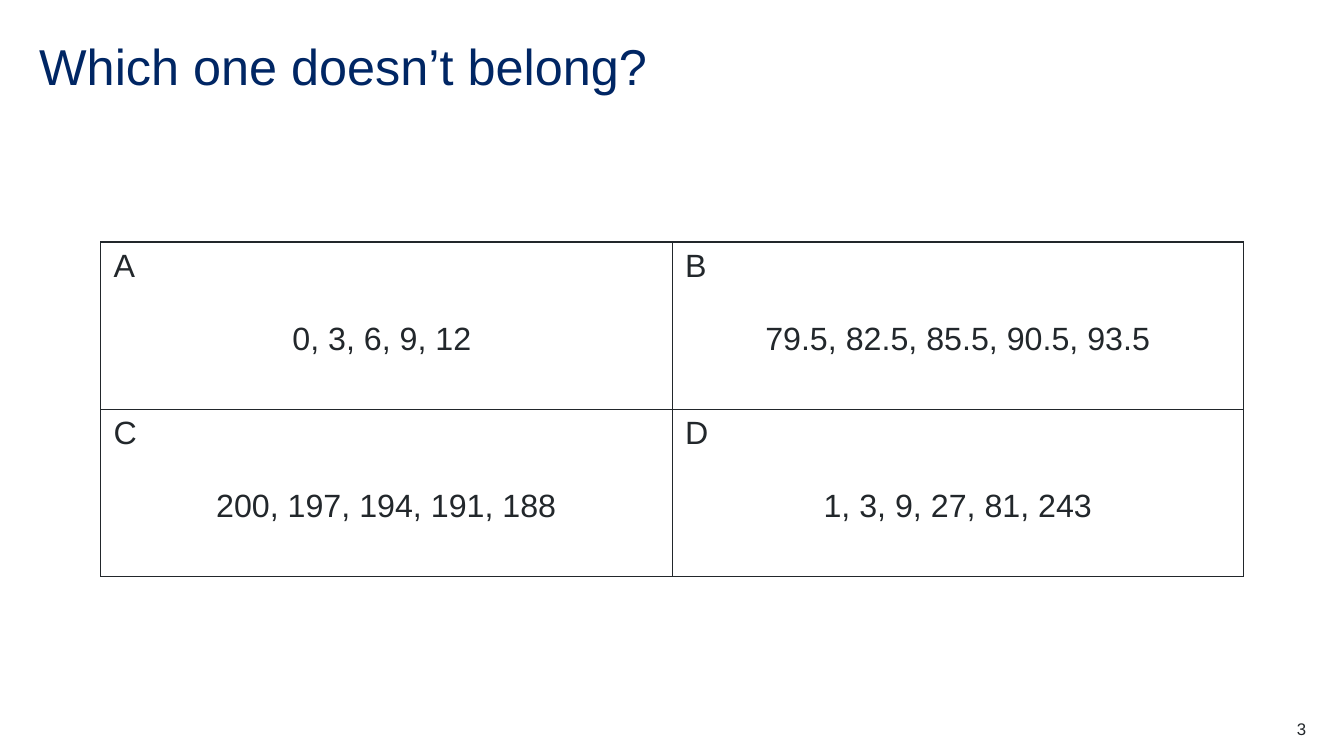
import pptx
import pptx.dml.color
import pptx.enum.text
import pptx.oxml
import pptx.oxml.ns
import pptx.util

Pt = pptx.util.Pt
ALIGN = pptx.enum.text.PP_ALIGN
ANCHOR = pptx.enum.text.MSO_ANCHOR

# Content
TITLE = "Which one doesn’t belong?"
PAGE_NUMBER = "3"
SEQUENCES = [
    [("A", "0, 3, 6, 9, 12 "), ("B", "79.5, 82.5, 85.5, 90.5, 93.5")],
    [("C", "200, 197, 194, 191, 188"), ("D", "1, 3, 9, 27, 81, 243")],
]

# Style and layout, in points
FONT, NAVY, INK = "Arial", "002664", "22272B"
TABLE_LEFT, TABLE_TOP = 72, 172.8
COLUMN_WIDTH, ROW_HEIGHT = 408.24, 119.5
ANSWER_GAP = 26


def colour(value):
    return pptx.dml.color.RGBColor.from_string(value)


def write(para, text, size=23, ink=INK, align=ALIGN.LEFT, before=0, spacing=1.0):
    para.alignment = align
    para.space_before = Pt(before)
    para.line_spacing = spacing
    span = para.add_run()
    span.text = text
    span.font.name = FONT
    span.font.size = Pt(size)
    span.font.bold = False
    span.font.color.rgb = colour(ink)


def set_frame(frame, anchor):
    frame.word_wrap = True
    frame.auto_size = pptx.enum.text.MSO_AUTO_SIZE.NONE
    frame.vertical_anchor = anchor
    frame.margin_left = frame.margin_right = 0
    frame.margin_top = frame.margin_bottom = 0


def add_borders(cell, ink=INK, width=1):
    properties = cell._tc.get_or_add_tcPr()
    for position, side in enumerate(("lnL", "lnR", "lnT", "lnB")):
        properties.insert(position, pptx.oxml.parse_xml(
            f'<a:{side} {pptx.oxml.ns.nsdecls("a")} w="{Pt(width)}">'
            f'<a:solidFill><a:srgbClr val="{ink}"/></a:solidFill></a:{side}>'))


deck = pptx.Presentation()
deck.slide_width, deck.slide_height = Pt(960), Pt(540)
page = deck.slides.add_slide(deck.slide_layouts[5])

# Title
title = page.shapes.title
title.left, title.top, title.width, title.height = Pt(28), Pt(28), Pt(904.5), Pt(43.2)
set_frame(title.text_frame, ANCHOR.MIDDLE)
write(title.text_frame.paragraphs[0], TITLE, size=36, ink=NAVY, spacing=0.9)

# Table of sequences
rows, columns = len(SEQUENCES), len(SEQUENCES[0])
table = page.shapes.add_table(
    rows, columns, Pt(TABLE_LEFT), Pt(TABLE_TOP),
    Pt(columns * COLUMN_WIDTH), Pt(rows * ROW_HEIGHT)).table
table.first_row = table.horz_banding = False
for column in table.columns:
    column.width = Pt(COLUMN_WIDTH)
for row_index, sequence_row in enumerate(SEQUENCES):
    table.rows[row_index].height = Pt(ROW_HEIGHT)
    for column_index, (letter, numbers) in enumerate(sequence_row):
        cell = table.cell(row_index, column_index)
        cell.fill.background()
        cell.margin_left = cell.margin_right = Pt(9.2)
        cell.margin_top = cell.margin_bottom = Pt(4.6)
        add_borders(cell)
        write(cell.text_frame.paragraphs[0], letter)
        write(cell.text_frame.add_paragraph(), numbers,
              align=ALIGN.CENTER, before=ANSWER_GAP)

# Page number
number_box = page.shapes.add_textbox(Pt(876.2), Pt(513.4), Pt(56.9), Pt(14.4))
set_frame(number_box.text_frame, ANCHOR.BOTTOM)
write(number_box.text_frame.paragraphs[0], PAGE_NUMBER, size=12, align=ALIGN.RIGHT)

deck.save("out.pptx")
